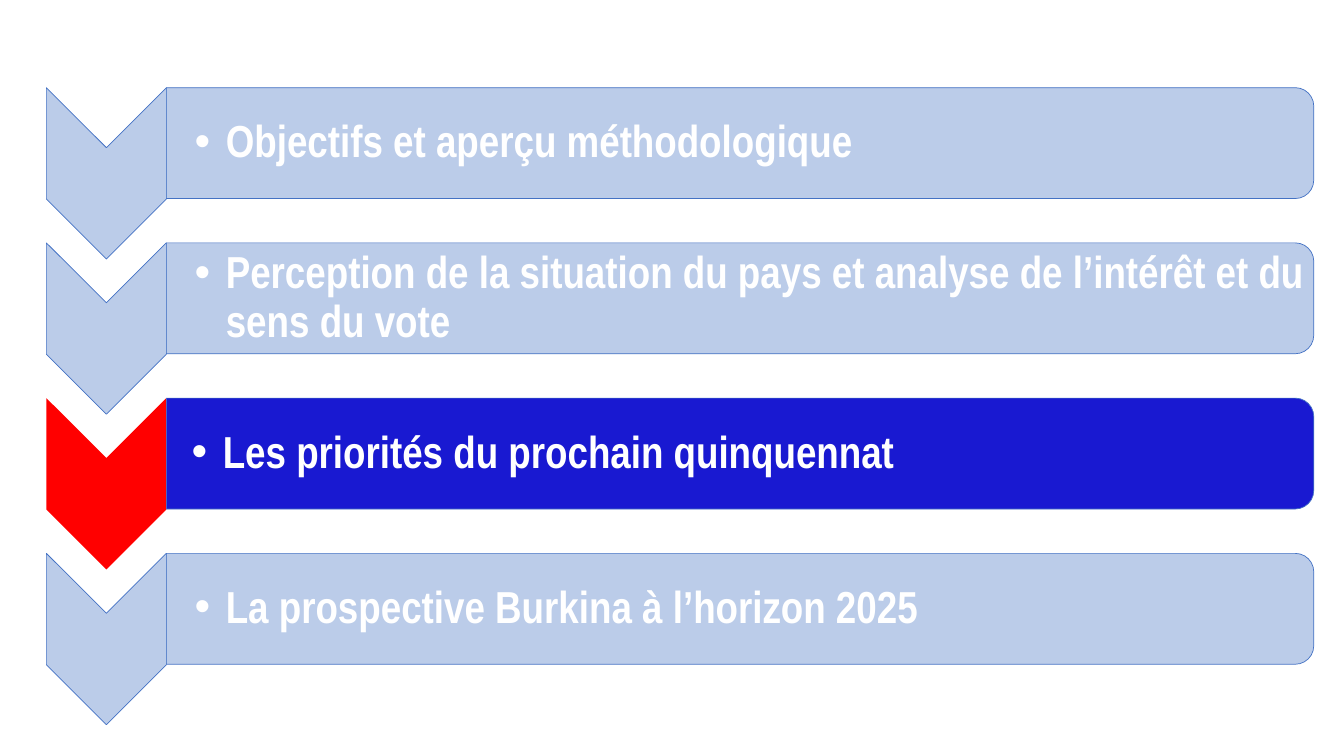
from lxml import etree
from pptx import Presentation
from pptx.dml.color import RGBColor
from pptx.enum.shapes import MSO_SHAPE
from pptx.enum.text import MSO_ANCHOR
from pptx.oxml.ns import qn
from pptx.util import Inches, Pt

CHEVRON = MSO_SHAPE.CHEVRON
ROUNDED_END = MSO_SHAPE.ROUND_2_SAME_RECTANGLE
MIDDLE = MSO_ANCHOR.MIDDLE

PALE_BLUE = RGBColor(0xB4, 0xC7, 0xE7)
OUTLINE_BLUE = RGBColor(0x44, 0x72, 0xC4)
DEEP_BLUE = RGBColor(0x00, 0x00, 0xCC)
RED = RGBColor(0xFF, 0x00, 0x00)
WHITE = RGBColor(0xFF, 0xFF, 0xFF)

FONT = "Arial Narrow"
CHAPTERS = [
    "Objectifs et aperçu méthodologique",
    "Perception de la situation du pays et analyse de l’intérêt et du sens du vote",
    "Les priorités du prochain quinquennat",
    "La prospective Burkina à l’horizon 2025",
]
CURRENT = 2
ROW_PITCH = 1.54
ARROW_WIDTH, ARROW_HEIGHT = 1.19, 1.7
BAR_HEIGHT = 1.1


def add_turned_shape(slide, kind, left, top, width, height, fill, alpha=90, outline=OUTLINE_BLUE):
    shape = slide.shapes.add_shape(
        kind,
        Inches(left + (width - height) / 2),
        Inches(top + (height - width) / 2),
        Inches(height),
        Inches(width),
    )
    shape.rotation = 90
    shape.shadow.inherit = False
    shape.fill.solid()
    shape.fill.fore_color.rgb = fill
    if alpha < 100:
        color = shape.fill._xPr.find(qn("a:solidFill"))[0]
        etree.SubElement(color, qn("a:alpha")).set("val", str(alpha * 1000))
    if outline is None:
        shape.line.fill.background()
    else:
        shape.line.color.rgb = outline
        shape.line.width = Pt(0.5)


def add_bullet_text(slide, text, left, top, width, height, size=32, color=WHITE,
                    inset=0.28, margin=0.03, indent=0.31):
    frame = slide.shapes.add_textbox(
        Inches(left), Inches(top), Inches(width), Inches(height)
    ).text_frame
    frame.word_wrap = True
    frame.vertical_anchor = MIDDLE
    frame.margin_left = Inches(inset)
    frame.margin_top = frame.margin_right = frame.margin_bottom = Inches(margin)
    paragraph = frame.paragraphs[0]
    paragraph.line_spacing = 0.9
    properties = paragraph._p.get_or_add_pPr()
    properties.set("marL", str(Inches(indent)))
    properties.set("indent", str(-Inches(indent)))
    etree.SubElement(properties, qn("a:buFont")).set("typeface", "Arial")
    etree.SubElement(properties, qn("a:buChar")).set("char", "•")
    run = paragraph.add_run()
    run.text = text
    run.font.name = FONT
    run.font.size = Pt(size)
    run.font.bold = True
    run.font.color.rgb = color


def add_chapter(slide, title, left, top, width, current):
    bar_left = left + ARROW_WIDTH
    bar_width = width - ARROW_WIDTH
    arrow_format = {"fill": RED, "alpha": 100, "outline": None} if current else {"fill": PALE_BLUE}
    text_format = {"inset": 0.25, "margin": 0.02} if current else {}
    add_turned_shape(slide, CHEVRON, left, top, ARROW_WIDTH, ARROW_HEIGHT, **arrow_format)
    add_turned_shape(slide, ROUNDED_END, bar_left, top, bar_width, BAR_HEIGHT,
                     fill=DEEP_BLUE if current else PALE_BLUE)
    add_bullet_text(slide, title, bar_left, top + 0.05, bar_width - 0.05,
                    BAR_HEIGHT - 0.1, **text_format)


def add_agenda(slide, left, top, width):
    for row, title in enumerate(CHAPTERS):
        add_chapter(slide, title, left, top + row * ROW_PITCH, width, row == CURRENT)


def main():
    deck = Presentation()
    deck.slide_width = Inches(13.33)
    deck.slide_height = Inches(7.5)
    slide = deck.slides.add_slide(deck.slide_layouts[6])
    add_agenda(slide, left=0.46, top=0.87, width=12.57)
    deck.save("out.pptx")


if __name__ == "__main__":
    main()
